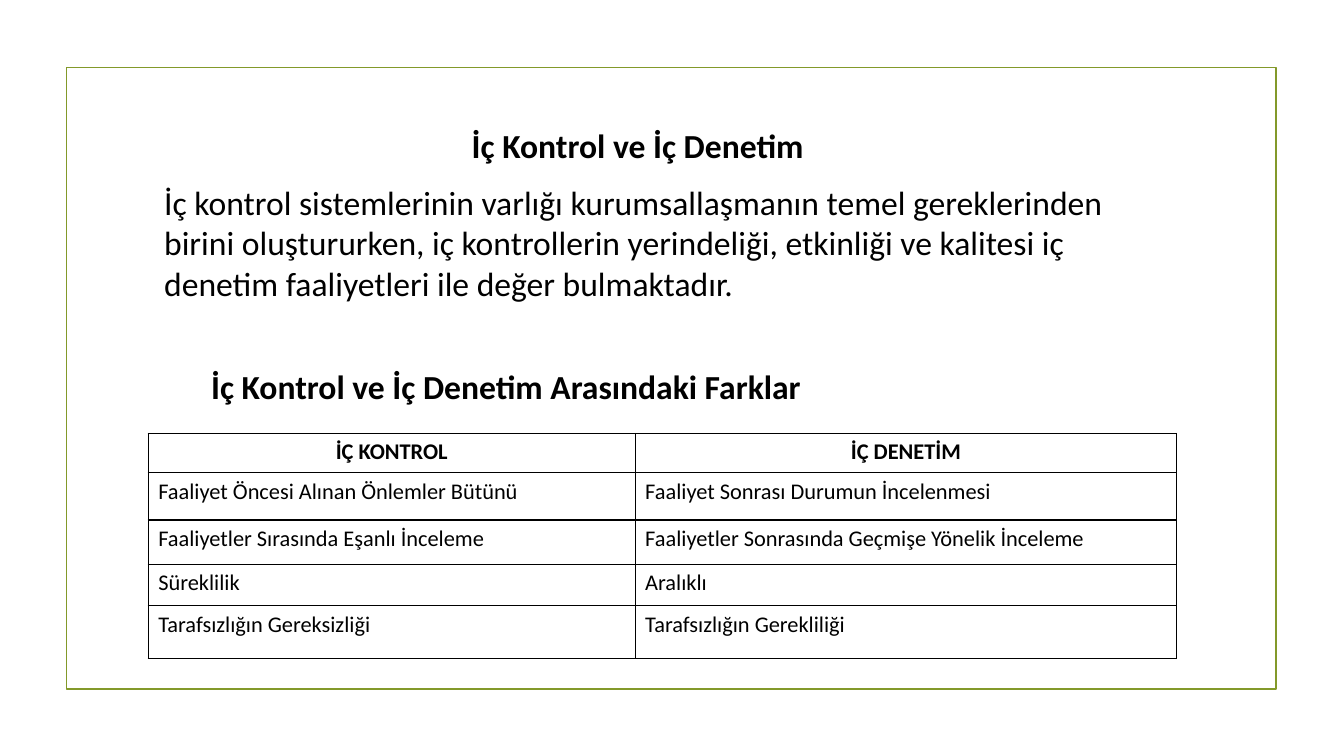
"""Build a slide that compares internal control with internal audit."""
import pptx
import pptx.util
import pptx.oxml
import pptx.oxml.ns
import pptx.dml.color
import pptx.enum.text
import pptx.enum.shapes

BLACK = pptx.dml.color.RGBColor(0, 0, 0)
GREEN = pptx.dml.color.RGBColor(0x83, 0x99, 0x2A)
ALIGN = pptx.enum.text.PP_ALIGN

TITLE = "İç Kontrol ve İç Denetim"
INTRO = (
    "İç kontrol sistemlerinin varlığı kurumsallaşmanın temel gereklerinden "
    "birini oluştururken, iç kontrollerin yerindeliği, etkinliği ve kalitesi "
    "iç denetim faaliyetleri ile değer bulmaktadır."
)
HEADING = "İç Kontrol ve İç Denetim Arasındaki Farklar"
ROWS = [
    ("İÇ KONTROL", "İÇ DENETİM"),
    ("Faaliyet Öncesi Alınan Önlemler Bütünü", "Faaliyet Sonrası Durumun İncelenmesi"),
    ("Faaliyetler Sırasında Eşanlı İnceleme", "Faaliyetler Sonrasında Geçmişe Yönelik İnceleme"),
    ("Süreklilik", "Aralıklı"),
    ("Tarafsızlığın Gereksizliği", "Tarafsızlığın Gerekliliği"),
]

WIDTH, HEIGHT = pptx.util.Inches(13.33), pptx.util.Inches(7.5)
FRAME = (4.95, 8.93, 90.02, 82.27)
INTRO_BOX = (8.63, 15.87, 77.64, 25.6)
HEAD_BOX = (9.6, 47.73, 56.11, 6.67)
TABLE_AT = (11.03, 57.33)
COLS = (36.23, 40.29)
LINES = (5.2, 6.27, 5.87, 5.47, 6.93)

BODY = {"size": pptx.util.Pt(24), "name": "Calibri", "bold": False}
BOLD = {**BODY, "bold": True}
CELL = {**BODY, "size": pptx.util.Pt(16)}
HEAD = {**CELL, "bold": True}
BORDER = (
    '<a:{} xmlns:a="http://schemas.openxmlformats.org/drawingml/2006/main" w="12700">'
    '<a:solidFill><a:srgbClr val="{}"/></a:solidFill></a:{}>'
)


def across(share):
    return round(WIDTH * share / 100)


def down(share):
    return round(HEIGHT * share / 100)


def place(box):
    left, top, wide, high = box
    return across(left), down(top), across(wide), down(high)


def write(para, text, align, style):
    para.alignment = align
    run = para.add_run()
    run.text = text
    for key, value in style.items():
        setattr(run.font, key, value)
    run.font.color.rgb = BLACK


def add_text(slide, box, parts):
    frame = slide.shapes.add_textbox(*place(box)).text_frame
    frame.word_wrap = True
    frame.auto_size = pptx.enum.text.MSO_AUTO_SIZE.SHAPE_TO_FIT_TEXT
    for index, (text, align, style, inset) in enumerate(parts):
        para = frame.add_paragraph() if index else frame.paragraphs[0]
        if index:
            para.space_before = pptx.util.Pt(12)
        if inset:
            para._p.get_or_add_pPr().set("marL", str(pptx.util.Inches(inset)))
        write(para, text, align, style)


def add_frame(slide):
    kind = pptx.enum.shapes.MSO_SHAPE.RECTANGLE
    frame = slide.shapes.add_shape(kind, *place(FRAME))
    frame.shadow.inherit = False
    frame.fill.background()
    frame.line.color.rgb = GREEN
    frame.line.width = pptx.util.Pt(1.25)


def add_grid(slide):
    area = place((*TABLE_AT, sum(COLS), sum(LINES)))
    table = slide.shapes.add_table(len(ROWS), len(COLS), *area).table
    table.first_row = table.horz_banding = False
    for column, share in zip(table.columns, COLS):
        column.width = across(share)
    for index, (row, share) in enumerate(zip(table.rows, LINES)):
        row.height = down(share)
        align, style = (ALIGN.JUSTIFY, CELL) if index else (ALIGN.CENTER, HEAD)
        for cell, text in zip(row.cells, ROWS[index]):
            write(cell.text_frame.paragraphs[0], text, align, style)
            props = cell._tc.get_or_add_tcPr()
            for side in ("lnL", "lnR", "lnT", "lnB"):
                props.append(pptx.oxml.parse_xml(BORDER.format(side, BLACK, side)))
            cell.fill.background()


def main():
    deck = pptx.Presentation()
    deck.slide_width, deck.slide_height = WIDTH, HEIGHT
    slide = deck.slides.add_slide(deck.slide_layouts[6])
    add_frame(slide)
    add_grid(slide)
    add_text(slide, HEAD_BOX, [(HEADING, ALIGN.CENTER, BOLD, 0)])
    add_text(slide, INTRO_BOX, [
        (TITLE, ALIGN.CENTER, BOLD, 0),
        (INTRO, ALIGN.LEFT, BODY, 0.38),
    ])
    deck.save("out.pptx")


if __name__ == "__main__":
    main()
